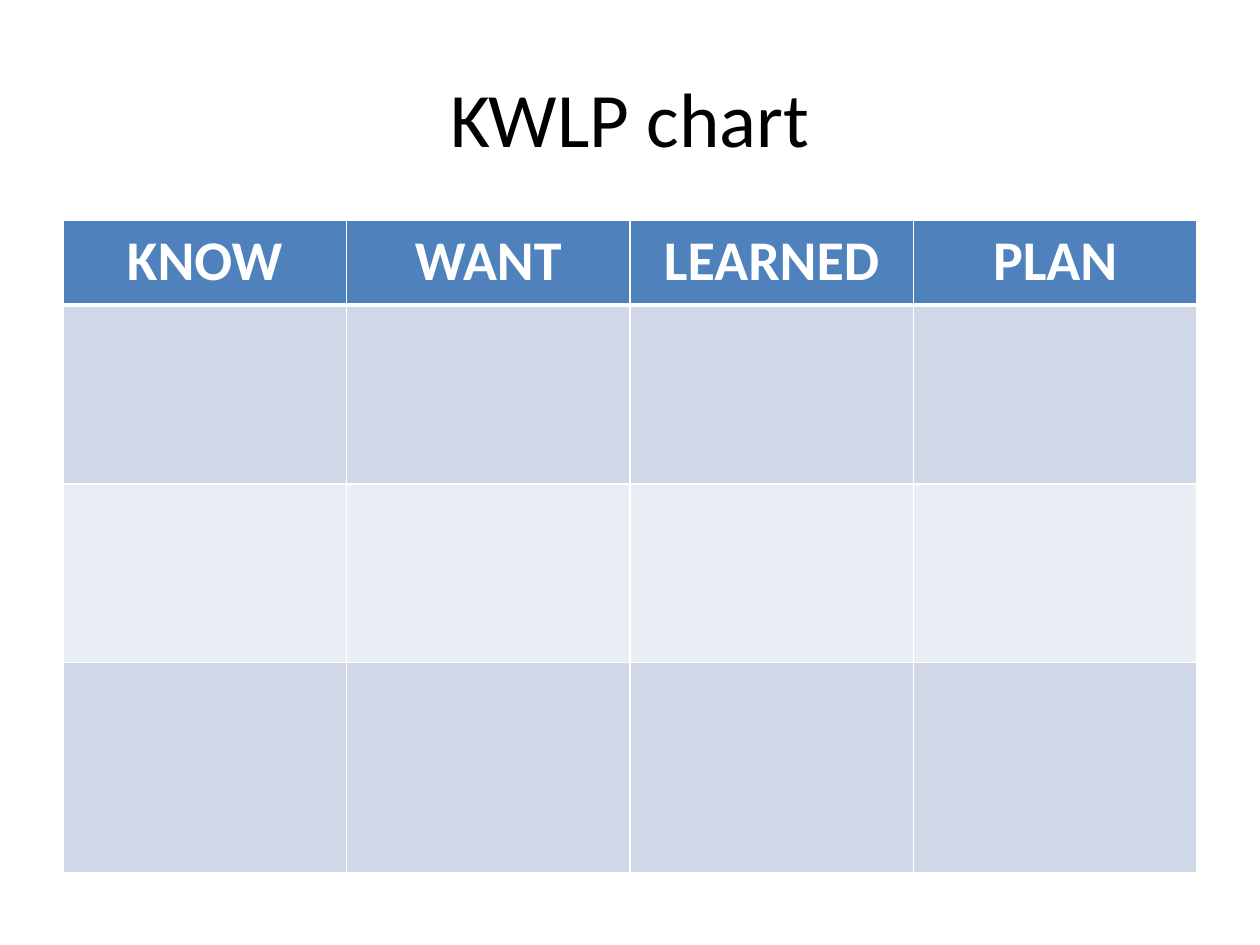
from lxml import etree
from pptx import Presentation
from pptx.dml.color import RGBColor
from pptx.enum.text import MSO_ANCHOR, PP_ALIGN
from pptx.oxml.ns import qn
from pptx.util import Inches, Pt

CENTER = PP_ALIGN.CENTER
MIDDLE = MSO_ANCHOR.MIDDLE

FONT = "Calibri"
BLACK = RGBColor(0x00, 0x00, 0x00)
WHITE = RGBColor(0xFF, 0xFF, 0xFF)
BLUE = RGBColor(0x4F, 0x81, 0xBD)
DARK = RGBColor(0xD0, 0xD8, 0xE8)
LIGHT = RGBColor(0xE9, 0xED, 0xF4)

HEADS = ["KNOW", "WANT", "LEARNED", "PLAN"]
FILLS = [BLUE, DARK, LIGHT, DARK]
HEIGHTS = [0.67, 1.42, 1.42, 1.67]
LEFT, WIDTH = 0.5, 9


def add_text(frame, text, size, color, bold=False):
    para = frame.paragraphs[0]
    para.alignment = CENTER
    run = para.add_run()
    run.text = text
    font = run.font
    font.name = FONT
    font.size = Pt(size)
    font.bold = bold
    font.color.rgb = color


def add_title(slide, text):
    box = slide.shapes.add_textbox(
        Inches(LEFT), Inches(0.3), Inches(WIDTH), Inches(1.25))
    frame = box.text_frame
    frame.word_wrap = True
    frame.vertical_anchor = MIDDLE
    add_text(frame, text, 44, BLACK)


def set_edges(cell, top, bottom):
    """Draw white cell borders; call before the fill is set."""
    props = cell._tc.get_or_add_tcPr()
    for side, width in (("L", 1), ("R", 1), ("T", top), ("B", bottom)):
        line = etree.SubElement(props, qn(f"a:ln{side}"), w=str(Pt(width)))
        fill = etree.SubElement(line, qn("a:solidFill"))
        etree.SubElement(fill, qn("a:srgbClr"), val=str(WHITE))


def add_grid(slide):
    table = slide.shapes.add_table(
        len(HEIGHTS), len(HEADS), Inches(LEFT), Inches(1.75),
        Inches(WIDTH), Inches(sum(HEIGHTS))).table
    for col in table.columns:
        col.width = Inches(WIDTH / len(HEADS))
    for i, (height, color) in enumerate(zip(HEIGHTS, FILLS)):
        table.rows[i].height = Inches(height)
        for cell in table.rows[i].cells:
            set_edges(cell, 3 if i == 1 else 1, 3 if i == 0 else 1)
            cell.fill.solid()
            cell.fill.fore_color.rgb = color
    for cell, head in zip(table.rows[0].cells, HEADS):
        add_text(cell.text_frame, head, 32, WHITE, bold=True)


def main():
    deck = Presentation()
    deck.slide_width = Inches(10)
    deck.slide_height = Inches(7.5)
    slide = deck.slides.add_slide(deck.slide_layouts[6])
    add_title(slide, "KWLP chart")
    add_grid(slide)
    deck.save("out.pptx")


if __name__ == "__main__":
    main()
